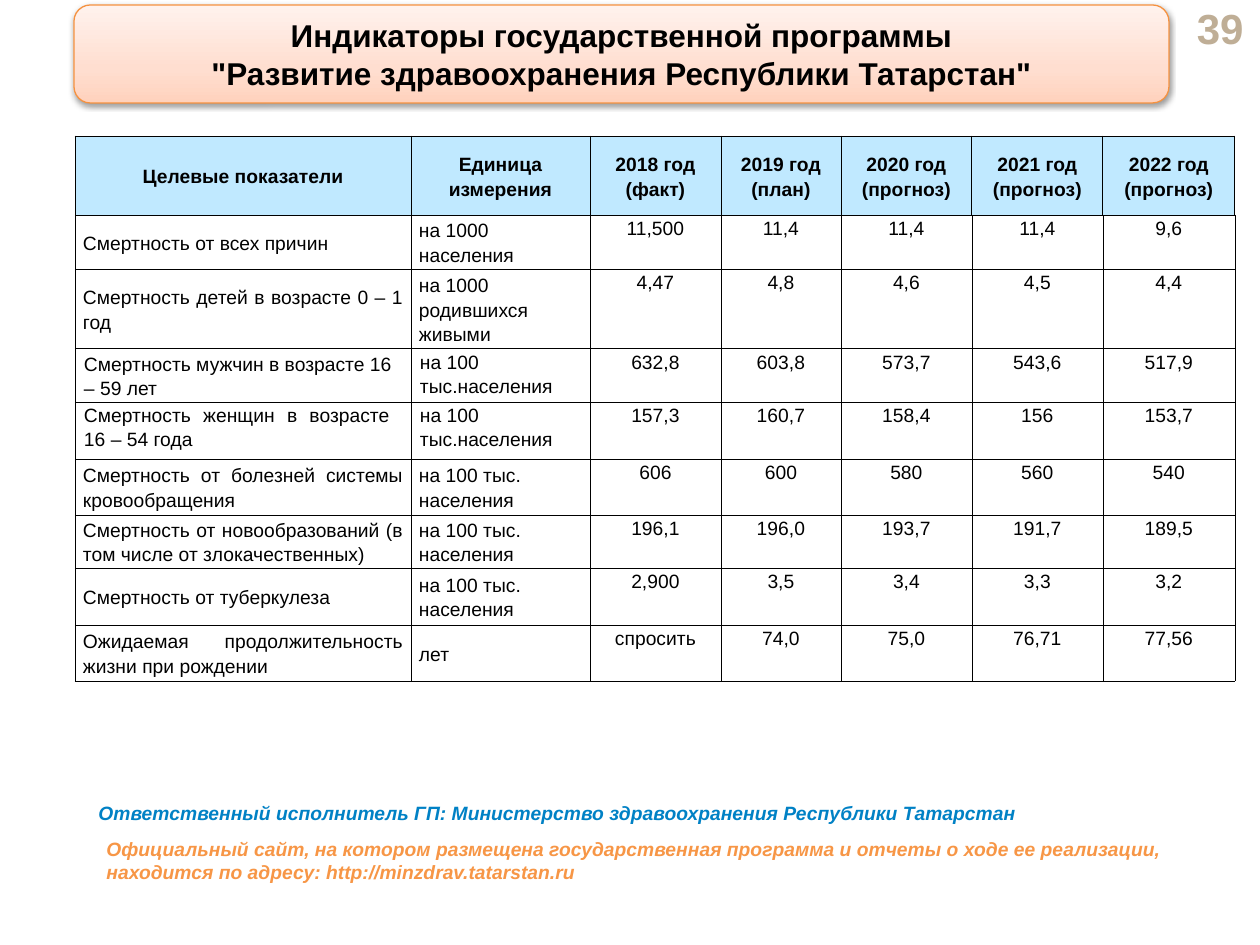
from pptx import Presentation
from pptx.dml.color import RGBColor
from pptx.enum.shapes import MSO_SHAPE as SHAPE
from pptx.enum.text import MSO_ANCHOR as ANCHOR, MSO_AUTO_SIZE as FIT, PP_ALIGN as ALIGN
from pptx.oxml import parse_xml
from pptx.oxml.ns import nsdecls, qn
from pptx.util import Pt

PX = 914400 / 126
FONT = "Arial"
COLORS = {
    "ink": "000000", "header": "C0E9FF", "number": "BFAE96",
    "owner": "0081C5", "site": "F79646", "panel_line": "F69240",
    "panel_low": "FFD2BD", "panel_mid": "FFDED0", "panel_high": "FFF2ED",
}
COLUMNS = [336, 179, 131, 120, 131, 131, 132]
ROWS = [79, 54, 79, 53, 57, 56, 53, 57, 56]
HEADER = [
    ["Целевые показатели"], ["Единица измерения"], ["2018 год", "(факт)"],
    ["2019 год", "(план)"], ["2020 год", "(прогноз)"],
    ["2021 год", "(прогноз)"], ["2022 год", "(прогноз)"],
]
MID, TOP = ANCHOR.MIDDLE, ANCHOR.TOP
LEFT, CENTER, JUSTIFY = ALIGN.LEFT, ALIGN.CENTER, ALIGN.JUSTIFY
REGULAR = (JUSTIFY, MID, MID, 8)
INDICATORS = [
    ("Смертность от всех причин", "на 1000 населения",
     ["11,500", "11,4", "11,4", "11,4", "9,6"], REGULAR),
    ("Смертность детей в возрасте 0 – 1 год", "на 1000 родившихся живыми",
     ["4,47", "4,8", "4,6", "4,5", "4,4"], REGULAR),
    ("Смертность мужчин в возрасте 16 – 59 лет", "на 100 тыс.населения",
     ["632,8", "603,8", "573,7", "543,6", "517,9"], (LEFT, MID, TOP, 9)),
    ("Смертность женщин в возрасте \n16 – 54 года", "на 100 тыс.населения",
     ["157,3", "160,7", "158,4", "156", "153,7"], (JUSTIFY, TOP, TOP, 9)),
    ("Смертность от болезней системы кровообращения", "на 100 тыс. населения",
     ["606", "600", "580", "560", "540"], REGULAR),
    ("Смертность от новообразований (в том числе от злокачественных)",
     "на 100 тыс. населения", ["196,1", "196,0", "193,7", "191,7", "189,5"], REGULAR),
    ("Смертность от туберкулеза", "на 100 тыс. населения",
     ["2,900", "3,5", "3,4", "3,3", "3,2"], REGULAR),
    ("Ожидаемая продолжительность жизни при рождении", "лет",
     ["спросить", "74,0", "75,0", "76,71", "77,56"], REGULAR),
]


def px(n):
    """Turn pixels into EMU."""
    return round(n * PX)


def rgb(name):
    """Return the named colour."""
    return RGBColor.from_string(COLORS[name])


def write(tf, paragraphs, size, color="ink", bold=False, italic=False, align=LEFT, spacing=1.0):
    """Fill a text frame, one run for each line."""
    for i, text in enumerate(paragraphs):
        p = tf.add_paragraph() if i else tf.paragraphs[0]
        p.alignment, p.line_spacing = align, spacing
        for j, line in enumerate(text.split("\n")):
            if j:
                p.add_line_break()
            r = p.add_run()
            r.text = line
            f = r.font
            f.name, f.size, f.bold, f.italic = FONT, Pt(size), bold, italic
            f.color.rgb = rgb(color)


def add_title(s, x, y, w, h):
    """Place the title over its rounded gradient panel."""
    panel = s.shapes.add_shape(SHAPE.ROUNDED_RECTANGLE, px(x), px(y), px(w), px(h))
    stops = "".join(
        f'<a:gs pos="{pos}"><a:srgbClr val="{COLORS[name]}"/></a:gs>'
        for pos, name in [(0, "panel_low"), (35000, "panel_mid"), (100000, "panel_high")])
    spPr = panel._element.spPr
    spPr.append(parse_xml(
        f'<a:gradFill {nsdecls("a")} rotWithShape="1"><a:gsLst>{stops}</a:gsLst>'
        '<a:lin ang="16200000" scaled="0"/></a:gradFill>'))
    panel.line.color.rgb, panel.line.width = rgb("panel_line"), Pt(0.75)
    panel.shadow.inherit = False
    spPr.find(qn("a:effectLst")).append(parse_xml(
        f'<a:outerShdw {nsdecls("a")} blurRad="40000" dist="20000" dir="5400000" rotWithShape="0">'
        f'<a:srgbClr val="{COLORS["ink"]}"><a:alpha val="38000"/></a:srgbClr></a:outerShdw>'))
    s.shapes._spTree.insert(2, panel._element)

    title = s.shapes.title
    title.left, title.top, title.width, title.height = px(x), px(y), px(w), px(h)
    tf = title.text_frame
    tf.auto_size, tf.word_wrap, tf.vertical_anchor = FIT.NONE, True, MID
    write(tf, ['Индикаторы государственной программы\n"Развитие здравоохранения Республики Татарстан"'],
          18, bold=True, align=CENTER)


def add_text(s, x, y, w, h, text, size, color, italic=False, align=LEFT, anchor=TOP):
    """Place a bold text box."""
    tf = s.shapes.add_textbox(px(x), px(y), px(w), px(h)).text_frame
    tf.word_wrap, tf.vertical_anchor = True, anchor
    write(tf, [text], size, color, True, italic, align)


def format_cell(cell, paragraphs, align, anchor, inset, header=False):
    """Write one cell with its borders and fill."""
    cell.margin_left = cell.margin_right = px(inset)
    cell.margin_top = cell.margin_bottom = 0
    cell.vertical_anchor = anchor
    write(cell.text_frame, paragraphs, 11, bold=header, align=align, spacing=1.15)
    tcPr = cell._tc.get_or_add_tcPr()
    for side in "LRTB":
        width = Pt(0.5 if header and side != "B" else 0.25)
        tcPr.append(parse_xml(
            f'<a:ln{side} {nsdecls("a")} w="{width}"><a:solidFill>'
            f'<a:srgbClr val="{COLORS["ink"]}"/></a:solidFill></a:ln{side}>'))
    if header:
        cell.fill.solid()
        cell.fill.fore_color.rgb = rgb("header")
    else:
        cell.fill.background()


def add_indicators(s, x, y):
    """Place the table of target indicators."""
    tbl = s.shapes.add_table(len(ROWS), len(COLUMNS), px(x), px(y),
                             px(sum(COLUMNS)), px(sum(ROWS))).table
    tbl.first_row = tbl.horz_banding = False
    for col, w in zip(tbl.columns, COLUMNS):
        col.width = px(w)
    for row, h in zip(tbl.rows, ROWS):
        row.height = px(h)
    for c, lines in enumerate(HEADER):
        format_cell(tbl.cell(0, c), lines, CENTER, MID, 8, header=True)
    for i, (label, unit, values, style) in enumerate(INDICATORS, 1):
        align, label_anchor, unit_anchor, inset = style
        format_cell(tbl.cell(i, 0), [label], align, label_anchor, inset)
        format_cell(tbl.cell(i, 1), [unit], LEFT, unit_anchor, inset)
        for c, value in enumerate(values, 2):
            format_cell(tbl.cell(i, c), [value], CENTER, TOP, 9)


def main():
    """Build and save the slide."""
    prs = Presentation()
    prs.slide_width, prs.slide_height = px(1260), px(945)
    s = prs.slides.add_slide(prs.slide_layouts[5])
    add_title(s, 74, 5, 1095, 98)
    add_text(s, 1148, 6, 108, 43, "39", 24, "number", align=ALIGN.RIGHT, anchor=MID)
    add_indicators(s, 75, 136)
    add_text(s, 86, 795, 1153, 36,
             "Ответственный исполнитель ГП: Министерство здравоохранения Республики Татарстан",
             11, "owner", italic=True)
    add_text(s, 94, 831, 1153, 59,
             "Официальный сайт, на котором размещена государственная программа и отчеты о ходе "
             "ее реализации, находится по адресу: http://minzdrav.tatarstan.ru",
             11, "site", italic=True)
    prs.save("out.pptx")


if __name__ == "__main__":
    main()
